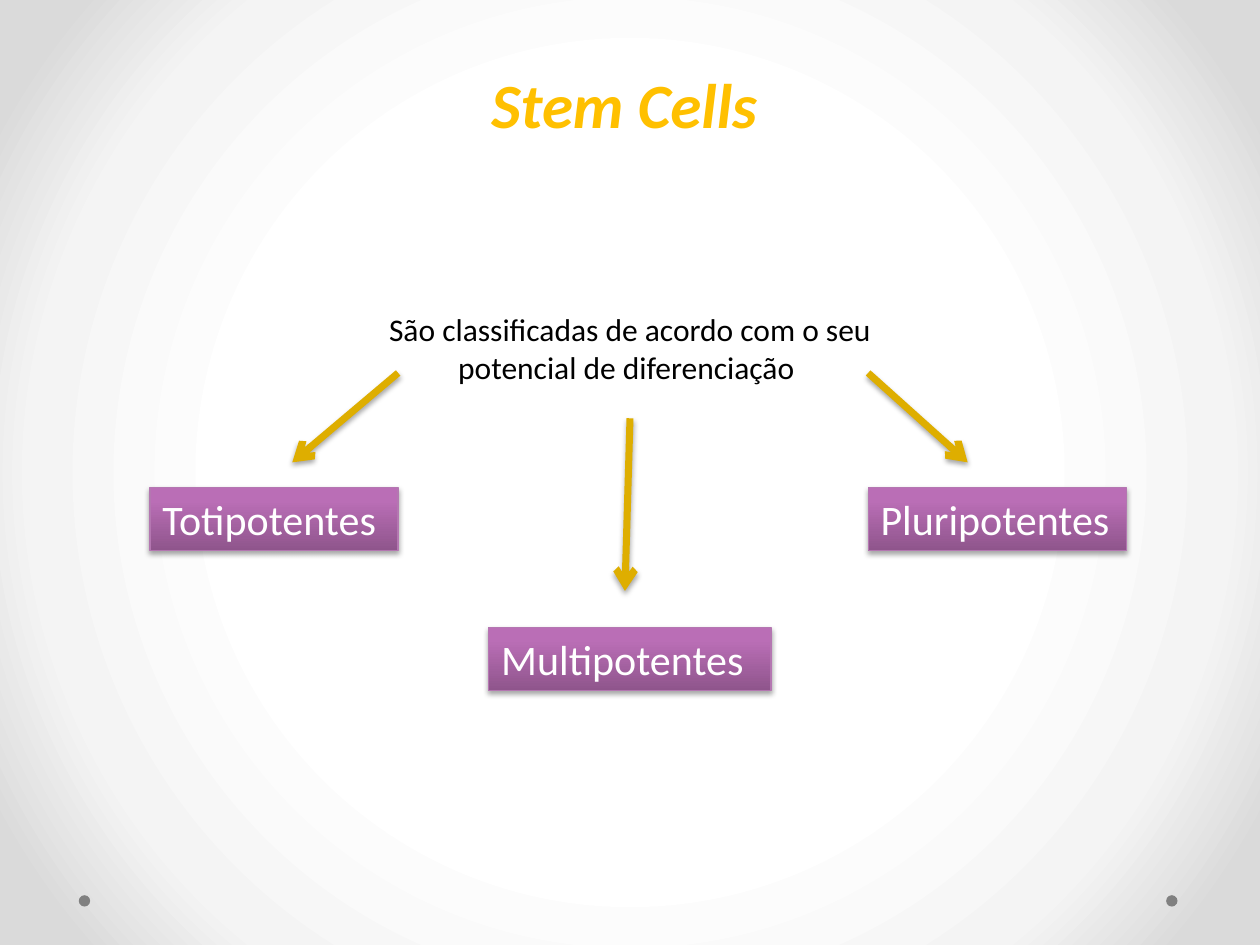
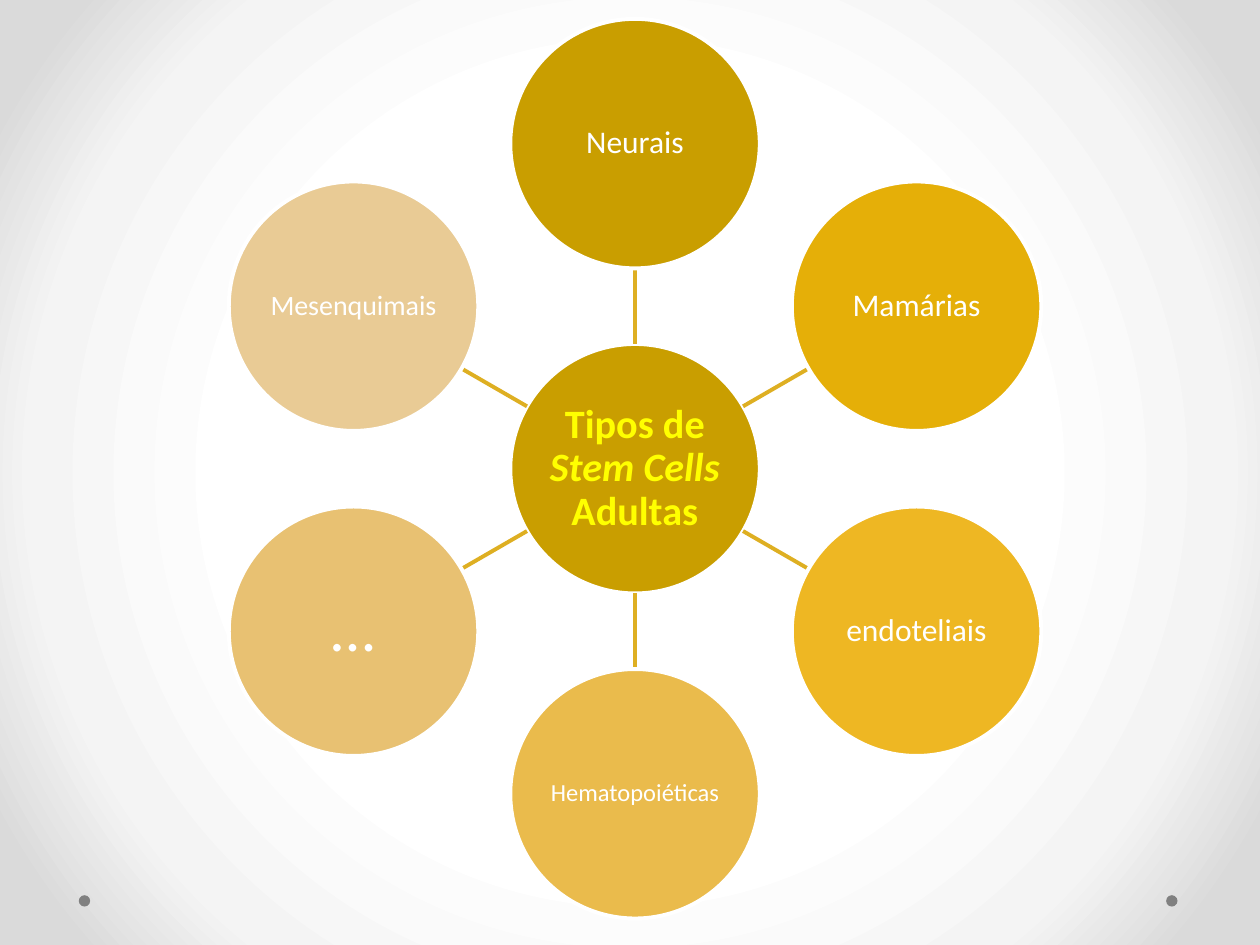
"""Build two slides on the classes and the adult types of stem cells."""
from math import cos, radians, sin
from typing import NamedTuple

from pptx import Presentation, util as u
from pptx.dml.color import RGBColor
from pptx.enum import shapes, text
from pptx.oxml import parse_xml
from pptx.oxml.ns import nsdecls, qn

FONT = "Calibri"
WHITE, BLACK, GREY = "FFFFFF", "000000", "808080"
GOLD, ARROW_GOLD, SPOKE_GOLD, HUB_GOLD = "FFC000", "DEAE00", "DEAF22", "C99E00"
YELLOW, PURPLE_EDGE = "FFFF00", "B477B1"
PURPLE_STOPS = [(0, "8F558C"), (80, "BA6EB6"), (100, "BC6EB8")]
BACKGROUND_STOPS = [(50, WHITE), (76, "F4F4F4"), (92, "DADADA")]
UPWARD = '<a:lin ang="16200000" scaled="0"/>'
RADIAL = ('<a:path path="circle"><a:fillToRect l="50000" t="50000" '
          'r="50000" b="50000"/></a:path>')
SHADOW = ('<a:outerShdw blurRad="39000" dist="23000" dir="5400000" rotWithShape="0">'
          '<a:srgbClr val="000000"><a:alpha val="35000"/></a:srgbClr></a:outerShdw>')

HUB_X, HUB_Y = 5.04, 3.72
RADIUS, ORBIT = 0.99, 2.58


class Span(NamedTuple):
    words: str
    size: float
    color: str
    bold: bool = False
    italic: bool = False


class Label(NamedTuple):
    words: str
    left: float
    top: float
    width: float


class Arrow(NamedTuple):
    start: tuple[float, float]
    end: tuple[float, float]


class CellType(NamedTuple):
    words: str
    size: float
    color: str


LABELS = [
    Label("Totipotentes", 1.19, 3.87, 1.97),
    Label("Multipotentes", 3.88, 4.98, 2.24),
    Label("Pluripotentes", 6.89, 3.87, 2.05),
]
ARROWS = [
    Arrow((3.16, 2.96), (2.32, 3.67)),
    Arrow((5, 3.32), (4.96, 4.69)),
    Arrow((6.89, 2.96), (7.68, 3.67)),
]
CELL_TYPES = [
    CellType("Neurais", 18, HUB_GOLD),
    CellType("Mamárias", 18, "E5AF08"),
    CellType("endoteliais", 18, "EEB723"),
    CellType("Hematopoiéticas", 14, "EABB4C"),
    CellType("…", 36, "E8C172"),
    CellType("Mesenquimais", 16, "E9CB95"),
]


def rgb(color: str) -> RGBColor:
    """Turn a hex string into a colour."""
    return RGBColor.from_string(color)


def fill_gradient(owner, fill, stops: list[tuple[int, str]], direction: str) -> None:
    """Give the owner's fill a gradient with the given stops."""
    fill.solid()
    fill.fore_color.rgb = rgb(WHITE)
    solid = owner.element.find(".//" + qn("a:solidFill"))
    marks = "".join(f'<a:gs pos="{place * 1000}"><a:srgbClr val="{color}"/></a:gs>'
                    for place, color in stops)
    gradient = parse_xml(f'<a:gradFill {nsdecls("a")} rotWithShape="1">'
                         f"<a:gsLst>{marks}</a:gsLst>{direction}</a:gradFill>")
    solid.getparent().replace(solid, gradient)


def set_effects(item, effect: str = "") -> None:
    """Replace the theme's effects by the given one, or by none."""
    item.element.spPr.append(
        parse_xml(f'<a:effectLst {nsdecls("a")}>{effect}</a:effectLst>'))


def set_line(line, color: str, width: float) -> None:
    """Colour a line and set its width in points."""
    line.color.rgb = rgb(color)
    line.width = u.Pt(width)


def write(box, spans: list[Span], align: text.PP_ALIGN) -> None:
    """Write one wrapped paragraph, run by run."""
    box.text_frame.word_wrap = True
    para = box.text_frame.paragraphs[0]
    para.alignment = align
    for span in spans:
        run = para.add_run()
        run.text = span.words
        run.font.name = FONT
        run.font.size = u.Pt(span.size)
        run.font.bold = span.bold
        run.font.italic = span.italic
        run.font.color.rgb = rgb(span.color)


def add_text(page, left: float, top: float, width: float, span: Span) -> None:
    """Add a centred text box."""
    box = page.shapes.add_textbox(u.Inches(left), u.Inches(top),
                                  u.Inches(width), u.Inches(0.71))
    write(box, [span], text.PP_ALIGN.CENTER)


def add_label(page, label: Label) -> None:
    """Add a purple label with a shadow."""
    box = page.shapes.add_shape(shapes.MSO_SHAPE.RECTANGLE, u.Inches(label.left),
                                u.Inches(label.top), u.Inches(label.width), u.Inches(0.5))
    fill_gradient(box, box.fill, PURPLE_STOPS, UPWARD)
    set_line(box.line, PURPLE_EDGE, 0.75)
    set_effects(box, SHADOW)
    write(box, [Span(label.words, 24, WHITE)], text.PP_ALIGN.LEFT)


def add_line(page, start: tuple[float, float], end: tuple[float, float],
             color: str, width: float, effect: str = ""):
    """Add a straight connector."""
    points = [u.Inches(value) for value in (*start, *end)]
    connector = page.shapes.add_connector(shapes.MSO_CONNECTOR.STRAIGHT, *points)
    set_line(connector.line, color, width)
    set_effects(connector, effect)
    return connector


def add_arrow(page, arrow: Arrow) -> None:
    """Add a thick gold arrow with a shadow."""
    connector = add_line(page, arrow.start, arrow.end, ARROW_GOLD, 4, SHADOW)
    connector.element.find(".//" + qn("a:ln")).append(
        parse_xml(f'<a:tailEnd {nsdecls("a")} type="arrow"/>'))


def add_disc(page, center: tuple[float, float], radius: float, color: str):
    """Add a plain filled circle around a centre."""
    left, top = (u.Inches(value - radius) for value in center)
    size = u.Inches(2 * radius)
    disc = page.shapes.add_shape(shapes.MSO_SHAPE.OVAL, left, top, size, size)
    disc.fill.solid()
    disc.fill.fore_color.rgb = rgb(color)
    disc.line.fill.background()
    disc.shadow.inherit = False
    return disc


def add_cell(page, center: tuple[float, float], color: str, spans: list[Span]) -> None:
    """Add a white-edged circle with centred text."""
    disc = add_disc(page, center, RADIUS, color)
    set_line(disc.line, WHITE, 2.25)
    frame = disc.text_frame
    frame.margin_left = frame.margin_right = u.Inches(0.01)
    frame.margin_top = frame.margin_bottom = u.Inches(0.01)
    frame.vertical_anchor = text.MSO_ANCHOR.MIDDLE
    write(disc, spans, text.PP_ALIGN.CENTER)
    frame.paragraphs[0].line_spacing = 0.9


def around_hub(distance: float, angle: float) -> tuple[float, float]:
    """Find the point at a clockwise angle from the top of the hub."""
    turn = radians(angle)
    return HUB_X + distance * sin(turn), HUB_Y - distance * cos(turn)


def add_page(deck):
    """Add a blank page with the two footer dots."""
    page = deck.slides.add_slide(deck.slide_layouts[6])
    for x in (9.3, 0.67):
        add_disc(page, (x, 7.15), 0.045, GREY)
    return page


def build_classes(deck) -> None:
    """Build the slide on classes by potential."""
    page = add_page(deck)
    for label in LABELS:
        add_label(page, label)
    add_text(page, 2.5, 2.41, 5, Span(
        "São classificadas de acordo com o seu potencial de diferenciação ", 18, BLACK))
    add_text(page, 2.87, 0.47, 4.17, Span("Stem Cells", 36, GOLD, True, True))
    for arrow in ARROWS:
        add_arrow(page, arrow)


def build_adult_types(deck) -> None:
    """Build the wheel of adult stem cell types."""
    page = add_page(deck)
    add_cell(page, (HUB_X, HUB_Y), HUB_GOLD, [
        Span("Tipos de ", 23, YELLOW, True),
        Span("Stem Cells ", 23, YELLOW, True, True),
        Span("Adultas", 23, YELLOW, True),
    ])
    step = 360 / len(CELL_TYPES)
    for index, cell in enumerate(CELL_TYPES):
        angle = index * step
        add_line(page, around_hub(RADIUS, angle), around_hub(ORBIT - RADIUS, angle),
                 SPOKE_GOLD, 2.25)
        add_cell(page, around_hub(ORBIT, angle), cell.color,
                 [Span(cell.words, cell.size, WHITE)])


def main() -> None:
    """Build and save the deck."""
    deck = Presentation()
    deck.slide_width, deck.slide_height = u.Inches(10), u.Inches(7.5)
    master = deck.slide_master
    fill_gradient(master, master.background.fill, BACKGROUND_STOPS, RADIAL)
    build_classes(deck)
    build_adult_types(deck)
    deck.save("out.pptx")


if __name__ == "__main__":
    main()
